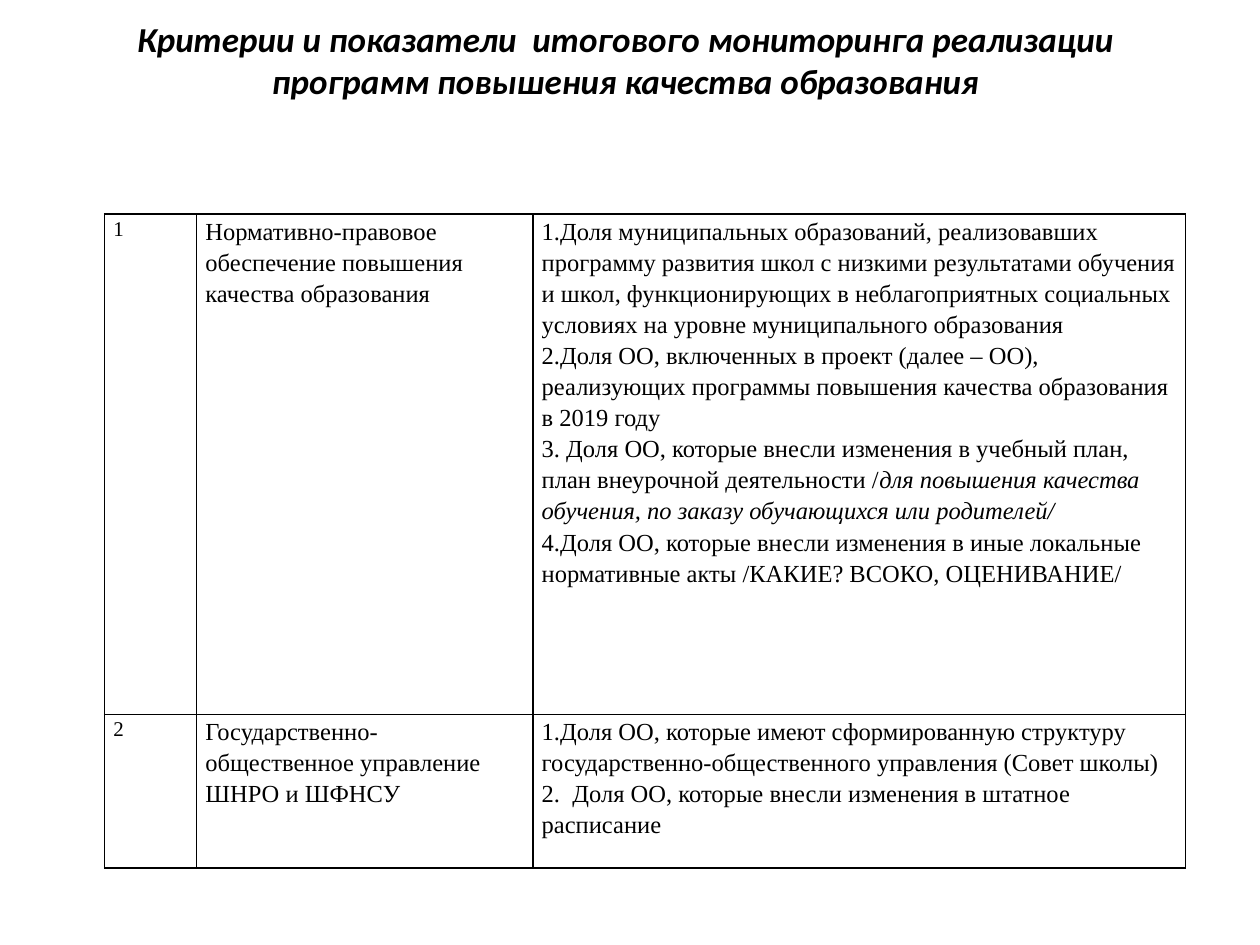
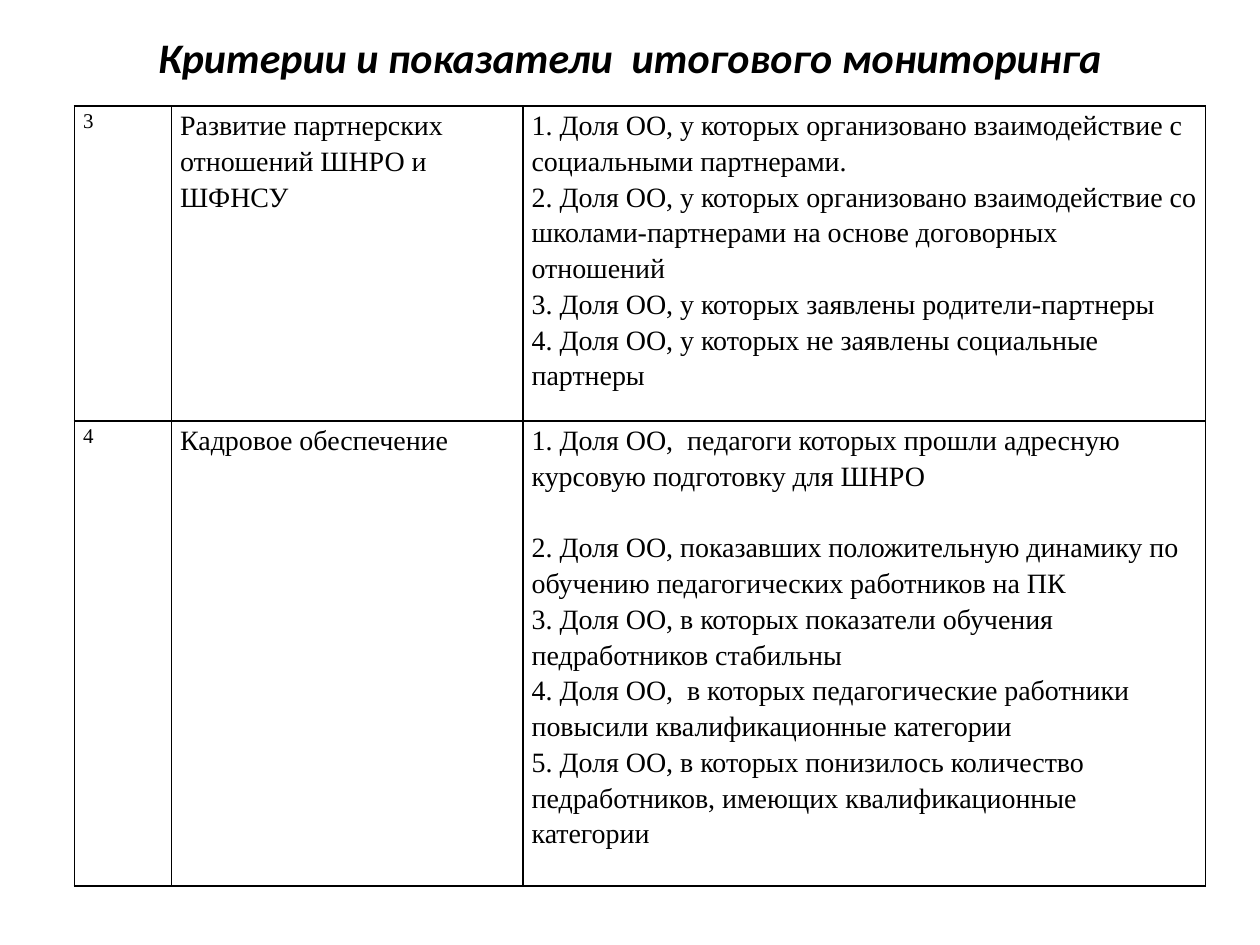
from lxml import etree
from pptx import Presentation
from pptx.dml.color import RGBColor
from pptx.enum.text import MSO_ANCHOR, MSO_AUTO_SIZE, PP_ALIGN
from pptx.oxml.ns import qn
from pptx.util import Inches, Pt

BLACK = RGBColor(0x00, 0x00, 0x00)
TITLE_FONT = "Calibri"
TABLE_FONT = "Times New Roman"
NUMBER_SIZE = 12
LINE_SPACING = 1.15
TITLE_ONLY = 5

# Each row: number, criterion, indicators. An indicator is a string or
# a (regular, italic) pair.
LEGAL_AND_GOVERNANCE = [
    ("1", "Нормативно-правовое обеспечение повышения качества образования", [
        "1.Доля муниципальных образований, реализовавших программу развития "
        "школ с низкими результатами обучения и школ, функционирующих в "
        "неблагоприятных социальных условиях на уровне муниципального образования",
        "2.Доля ОО, включенных в проект (далее – ОО), реализующих программы "
        "повышения качества образования в 2019 году",
        ("3. Доля ОО, которые внесли изменения в учебный план, план внеурочной "
         "деятельности /",
         "для повышения качества обучения, по заказу обучающихся или родителей/"),
        "4.Доля ОО, которые внесли изменения в иные локальные нормативные акты "
        "/КАКИЕ? ВСОКО, ОЦЕНИВАНИЕ/",
    ]),
    ("2", "Государственно-общественное управление ШНРО и ШФНСУ", [
        "1.Доля ОО, которые имеют сформированную структуру "
        "государственно-общественного управления (Совет школы)",
        "2.  Доля ОО, которые внесли изменения в штатное расписание",
    ]),
]
PARTNERS_AND_STAFF = [
    ("3", "Развитие партнерских отношений ШНРО и ШФНСУ", [
        "1. Доля ОО, у которых организовано взаимодействие с социальными партнерами.",
        "2. Доля ОО, у которых организовано взаимодействие со "
        "школами-партнерами на основе договорных отношений",
        "3. Доля ОО, у которых заявлены родители-партнеры",
        "4. Доля ОО, у которых не заявлены социальные партнеры",
    ]),
    ("4", "Кадровое обеспечение", [
        "1. Доля ОО,  педагоги которых прошли адресную курсовую подготовку для ШНРО",
        "2. Доля ОО, показавших положительную динамику по обучению "
        "педагогических работников на ПК",
        "3. Доля ОО, в которых показатели обучения педработников стабильны",
        "4. Доля ОО,  в которых педагогические работники повысили "
        "квалификационные категории",
        "5. Доля ОО, в которых понизилось количество педработников, имеющих "
        "квалификационные категории",
    ]),
]


def set_title(s, text, box, size, bottom_inset=0.05):
    title = s.shapes.title
    title.left, title.top, title.width, title.height = map(Inches, box)
    tf = title.text_frame
    tf.text = text
    tf.auto_size = MSO_AUTO_SIZE.NONE
    tf.vertical_anchor = MSO_ANCHOR.MIDDLE
    tf.margin_bottom = Inches(bottom_inset)
    p = tf.paragraphs[0]
    p.alignment = PP_ALIGN.CENTER
    font = p.font
    font.name, font.size = TITLE_FONT, Pt(size)
    font.bold = font.italic = True
    font.color.rgb = BLACK


def add_borders(cell):
    tc_pr = cell._tc.get_or_add_tcPr()
    for i, side in enumerate(("lnL", "lnR", "lnT", "lnB")):
        line = etree.Element(qn(f"a:{side}"), w=str(Pt(1)))
        fill = etree.SubElement(line, qn("a:solidFill"))
        etree.SubElement(fill, qn("a:srgbClr"), val=str(BLACK))
        tc_pr.insert(i, line)


def fill_cell(cell, items, size):
    """Write one paragraph per item and format the cell."""
    cell.fill.background()
    add_borders(cell)
    cell.margin_left = cell.margin_right = Inches(0.07)
    cell.margin_top = cell.margin_bottom = 0
    tf = cell.text_frame
    for i, item in enumerate(items):
        p = tf.add_paragraph() if i else tf.paragraphs[0]
        regular, italic = (item, "") if isinstance(item, str) else item
        p.add_run().text = regular
        if italic:
            r = p.add_run()
            r.text = italic
            r.font.italic = True
        p.line_spacing = LINE_SPACING
        p.font.name, p.font.size = TABLE_FONT, Pt(size)
        p.font.color.rgb = BLACK


def add_criteria_table(s, rows, left, top, col_widths, row_heights, size):
    frame = s.shapes.add_table(
        len(rows), len(col_widths), Inches(left), Inches(top),
        Inches(sum(col_widths)), Inches(sum(row_heights)))
    table = frame.table
    table.first_row = table.horz_banding = False
    for column, width in zip(table.columns, col_widths):
        column.width = Inches(width)
    for row, height, (number, criterion, indicators) in zip(
            table.rows, row_heights, rows):
        row.height = Inches(height)
        number_cell, criterion_cell, indicators_cell = row.cells
        fill_cell(number_cell, [number], NUMBER_SIZE)
        fill_cell(criterion_cell, [criterion], size)
        fill_cell(indicators_cell, indicators, size)
    return table


def legal_slide(prs):
    s = prs.slides.add_slide(prs.slide_layouts[TITLE_ONLY])
    set_title(s, "Критерии и показатели  итогового мониторинга реализации "
                 "программ повышения качества образования",
              (0.43, 0.13, 9.07, 1.02), 20, bottom_inset=0.38)
    add_criteria_table(s, LEGAL_AND_GOVERNANCE, 0.83, 1.7,
                       (0.73, 2.67, 5.18), (3.97, 1.22), 14)


def staff_slide(prs):
    s = prs.slides.add_slide(prs.slide_layouts[TITLE_ONLY])
    set_title(s, "Критерии и показатели  итогового мониторинга",
              (0.5, 0.3, 9, 0.3), 24)
    table = add_criteria_table(s, PARTNERS_AND_STAFF, 0.59, 0.84,
                               (0.77, 2.79, 5.42), (2.5, 3.69), 16)
    # One line of space sets the first staff indicator apart.
    table.cell(1, 2).text_frame.paragraphs[0].space_after = Pt(20.4)


def main():
    prs = Presentation()
    prs.slide_width, prs.slide_height = Inches(10), Inches(7.5)
    legal_slide(prs)
    staff_slide(prs)
    prs.save("out.pptx")


if __name__ == "__main__":
    main()
